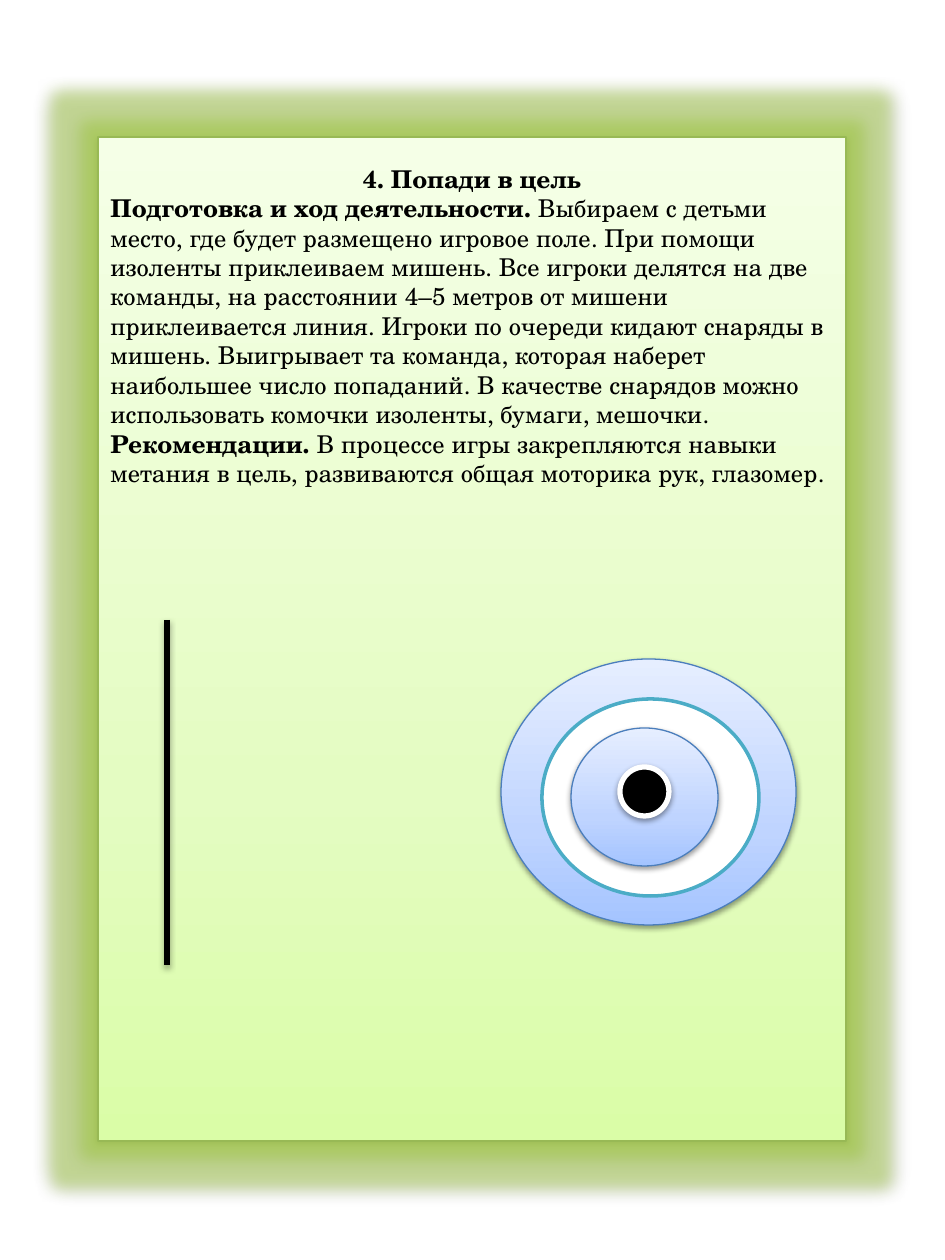
import pptx
import pptx.dml.color
import pptx.enum.shapes
import pptx.enum.text
import pptx.oxml
import pptx.oxml.ns
import pptx.util

PX = 914400 / 126
FONT = "TeX Gyre Schola"
COLORS = {
    "black": "000000",
    "white": "FFFFFF",
    "panel_line": "98B955",
    "glow": "A0D02F",
    "ring_line": "4B7EBC",
    "teal": "4BACC6",
}
GREEN = [(0, "DAFDA7"), (35, "E4FCC2"), (100, "F5FFE7")]
BLUE = [(0, "A4C4FF"), (35, "BFD4FF"), (100, "E6EEFF")]
RINGS = [
    (501, 659, 295, 266, BLUE, "ring_line", 0.75, True),
    (542, 699, 217, 197, "white", "teal", 2, False),
    (571, 728, 147, 138, BLUE, "ring_line", 0.75, True),
    (620, 767, 49, 49, "black", "white", 3, True),
]
HEADING = "4. Попади в цель"
RULES = [
    ("Подготовка и ход деятельности. ", True),
    ("Выбираем с детьми место, где будет размещено игровое поле. "
     "При помощи изоленты приклеиваем мишень. Все игроки делятся на две команды, "
     "на расстоянии 4–5 метров от мишени приклеивается линия. "
     "Игроки по очереди кидают снаряды в мишень. Выигрывает та команда, "
     "которая наберет наибольшее число попаданий. В качестве снарядов можно "
     "использовать комочки изоленты, бумаги, мешочки. ", False),
    ("Рекомендации. ", True),
    ("В процессе игры закрепляются навыки метания в цель, "
     "развиваются общая моторика рук, глазомер.", False),
]


def px(*lengths):
    return [round(n * PX) for n in lengths]


def rgb(name):
    return pptx.dml.color.RGBColor.from_string(COLORS[name])


def add_xml(parent, xml):
    ns = pptx.oxml.ns.nsdecls("a")
    parent.append(pptx.oxml.parse_xml(xml.replace(" ", f" {ns} ", 1)))


def effect_list(s):
    spPr = s._element.spPr
    tag = pptx.oxml.ns.qn("a:effectLst")
    if spPr.find(tag) is None:
        add_xml(spPr, "<a:effectLst />")
    return spPr.find(tag)


def add_shadow(s, dist=20000, alpha=38):
    add_xml(effect_list(s),
            f'<a:outerShdw blurRad="40000" dist="{dist}" dir="5400000" rotWithShape="0">'
            f'<a:srgbClr val="{COLORS["black"]}"><a:alpha val="{alpha * 1000}"/></a:srgbClr>'
            '</a:outerShdw>')


def add_glow(s, radius):
    add_xml(effect_list(s),
            f'<a:glow rad="{pptx.util.Pt(radius)}">'
            f'<a:srgbClr val="{COLORS["glow"]}"><a:alpha val="40000"/></a:srgbClr></a:glow>')


def set_gradient(s, stops):
    s.fill.gradient()
    s.fill.gradient_angle = 90
    gsLst = s._element.spPr.find(".//" + pptx.oxml.ns.qn("a:gsLst"))
    for gs in list(gsLst):
        gsLst.remove(gs)
    for pos, color in stops:
        add_xml(gsLst, f'<a:gs pos="{pos * 1000}"><a:srgbClr val="{color}"/></a:gs>')


def add_figure(slide, kind, box, fill, line, width):
    s = slide.shapes.add_shape(kind, *px(*box))
    s.shadow.inherit = False
    if isinstance(fill, list):
        set_gradient(s, fill)
    else:
        s.fill.solid()
        s.fill.fore_color.rgb = rgb(fill)
    s.line.color.rgb = rgb(line)
    s.line.width = pptx.util.Pt(width)
    return s


def set_text(s, runs, align):
    tf = s.text_frame
    tf.word_wrap = True
    tf.auto_size = pptx.enum.text.MSO_AUTO_SIZE.NONE
    tf.vertical_anchor = pptx.enum.text.MSO_ANCHOR.TOP
    p = tf.paragraphs[0]
    p.alignment = align
    for text, bold in runs:
        r = p.add_run()
        r.text = text
        r.font.name = FONT
        r.font.size = pptx.util.Pt(14)
        r.font.bold = bold
        r.font.color.rgb = rgb("black")


def add_panel(slide):
    panel = add_figure(slide, pptx.enum.shapes.MSO_SHAPE.RECTANGLE,
                       (98, 137, 748, 1004), GREEN, "panel_line", 0.75)
    add_glow(panel, 18)
    add_shadow(panel)


def add_heading(slide):
    title = slide.shapes.title
    title.left, title.top, title.width, title.height = px(98, 158, 748, 42)
    set_text(title, [(HEADING, True)], pptx.enum.text.PP_ALIGN.CENTER)
    slide.shapes._spTree.append(title._element)


def add_rules(slide):
    s = slide.shapes.add_textbox(*px(98, 187, 748, 309))
    set_text(s, RULES, pptx.enum.text.PP_ALIGN.LEFT)


def add_target(slide):
    for x, y, w, h, fill, line, width, shadow in RINGS:
        ring = add_figure(slide, pptx.enum.shapes.MSO_SHAPE.FLOWCHART_CONNECTOR,
                          (x, y, w, h), fill, line, width)
        if shadow:
            add_shadow(ring)


def add_throw_line(slide):
    s = slide.shapes.add_connector(pptx.enum.shapes.MSO_CONNECTOR.STRAIGHT,
                                   *px(167, 620, 167, 965))
    s.line.color.rgb = rgb("black")
    s.line.width = pptx.util.Pt(3)
    add_shadow(s, 23000, 35)


def main():
    prs = pptx.Presentation()
    prs.slide_width, prs.slide_height = px(945, 1260)
    slide = prs.slides.add_slide(prs.slide_layouts[5])
    add_panel(slide)
    add_heading(slide)
    add_rules(slide)
    add_target(slide)
    add_throw_line(slide)
    prs.save("out.pptx")


if __name__ == "__main__":
    main()
